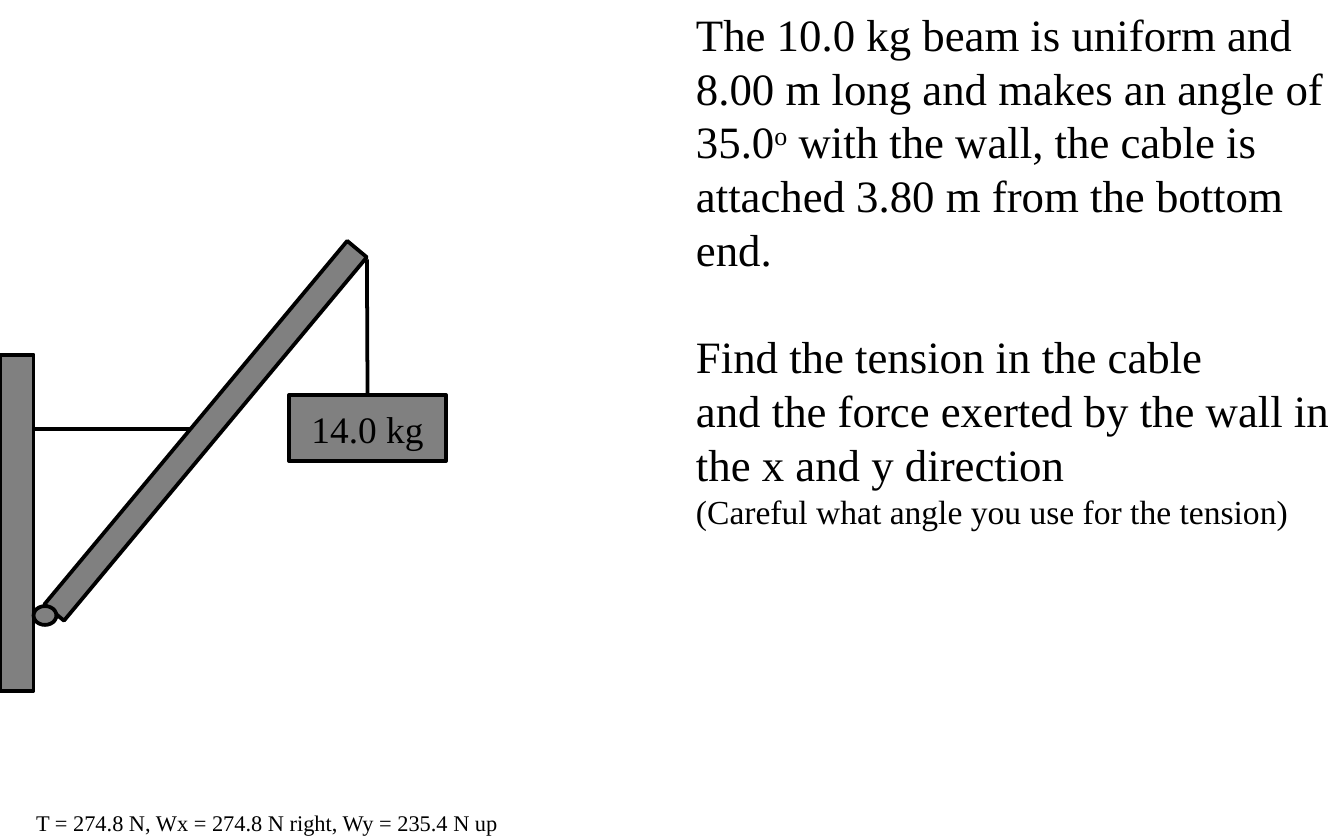
from lxml.etree import SubElement
from pptx import Presentation
from pptx.dml.color import RGBColor
from pptx.enum.shapes import MSO_CONNECTOR, MSO_SHAPE as Shape
from pptx.enum.text import MSO_ANCHOR, PP_ALIGN
from pptx.oxml.ns import qn
from pptx.util import Inches, Pt

FONT = "Times New Roman"
COLORS = {"ink": "000000", "solid": "808080"}
LINE_WIDTH = 2
LINE_PITCH = 1.2

ANSWER = [([("T = 274.8 N, Wx = 274.8 N right, Wy = 235.4 N up", False)], 12, 0)]
PROBLEM = [
    ([("The 10.0 kg beam is uniform and 8.00 m long and makes an angle of 35.0", False),
      ("o", True),
      (" with the wall, the cable is attached 3.80 m from the bottom end.", False)], 24, 0),
    ([("Find the tension in the cable", False)], 24, 1),
    ([("and the force exerted by the wall in the x and y direction", False)], 24, 0),
    ([("(Careful what angle you use for the tension)", False)], 18, 0),
]
TEXTS = [
    (ANSWER, (0.17, 5.97, 3.72, 0.3), False),
    (PROBLEM, (5.08, 0, 4.92, 4.04), True),
]

WALL = (0, 2.64, 0.25, 2.5)
BEAM = (-0.23, 3.11, 3.52, 0.19)
BEAM_ROTATION = 309.8
HINGE = (0.25, 4.51, 0.17, 0.14)
LOAD = (2.15, 2.94, 1.17, 0.49)
LOAD_LABEL = "14.0 kg"
WALL_CABLE = (0.25, 3.19, 1.42, 3.19)
LOAD_CABLE = (2.73, 1.93, 2.73, 2.94)


def color(name):
    return RGBColor.from_string(COLORS[name])


def style_line(line):
    line.color.rgb = color("ink")
    line.width = Pt(LINE_WIDTH)


def style_run(run, size):
    run.font.name = FONT
    run.font.size = Pt(size)
    run.font.color.rgb = color("ink")


def add_text(slide, paragraphs, box, wrap):
    frame = slide.shapes.add_textbox(*map(Inches, box)).text_frame
    frame.word_wrap = wrap
    for index, (pieces, size, lines_before) in enumerate(paragraphs):
        paragraph = frame.add_paragraph() if index else frame.paragraphs[0]
        pitch = size * LINE_PITCH
        paragraph.line_spacing = Pt(pitch)
        paragraph.space_before = Pt(pitch * lines_before)
        for text, raised in pieces:
            run = paragraph.add_run()
            run.text = text
            style_run(run, size)
            if raised:
                run.font._element.set("baseline", "30000")


def add_body(slide, preset, box, rotation=0):
    shape = slide.shapes.add_shape(preset, *map(Inches, box))
    shape.rotation = rotation
    shape.shadow.inherit = False
    shape.fill.solid()
    shape.fill.fore_color.rgb = color("solid")
    style_line(shape.line)
    return shape


def add_cable(slide, ends):
    cable = slide.shapes.add_connector(MSO_CONNECTOR.STRAIGHT, *map(Inches, ends))
    style_line(cable.line)
    SubElement(cable._element.spPr, qn("a:effectLst"))
    return cable


def main():
    presentation = Presentation()
    presentation.slide_width = Inches(10)
    presentation.slide_height = Inches(6.25)
    slide = presentation.slides.add_slide(presentation.slide_layouts[6])

    for paragraphs, box, wrap in TEXTS:
        add_text(slide, paragraphs, box, wrap)

    add_body(slide, Shape.RECTANGLE, WALL)
    add_body(slide, Shape.RECTANGLE, BEAM, BEAM_ROTATION)
    add_body(slide, Shape.OVAL, HINGE)
    add_cable(slide, WALL_CABLE)
    load_cable = add_cable(slide, LOAD_CABLE)

    load = add_body(slide, Shape.RECTANGLE, LOAD)
    load.text_frame.text = LOAD_LABEL
    load.text_frame.vertical_anchor = MSO_ANCHOR.MIDDLE
    label = load.text_frame.paragraphs[0]
    label.alignment = PP_ALIGN.CENTER
    style_run(label.runs[0], 20)
    load_cable.end_connect(load, 0)

    presentation.save("out.pptx")


if __name__ == "__main__":
    main()
